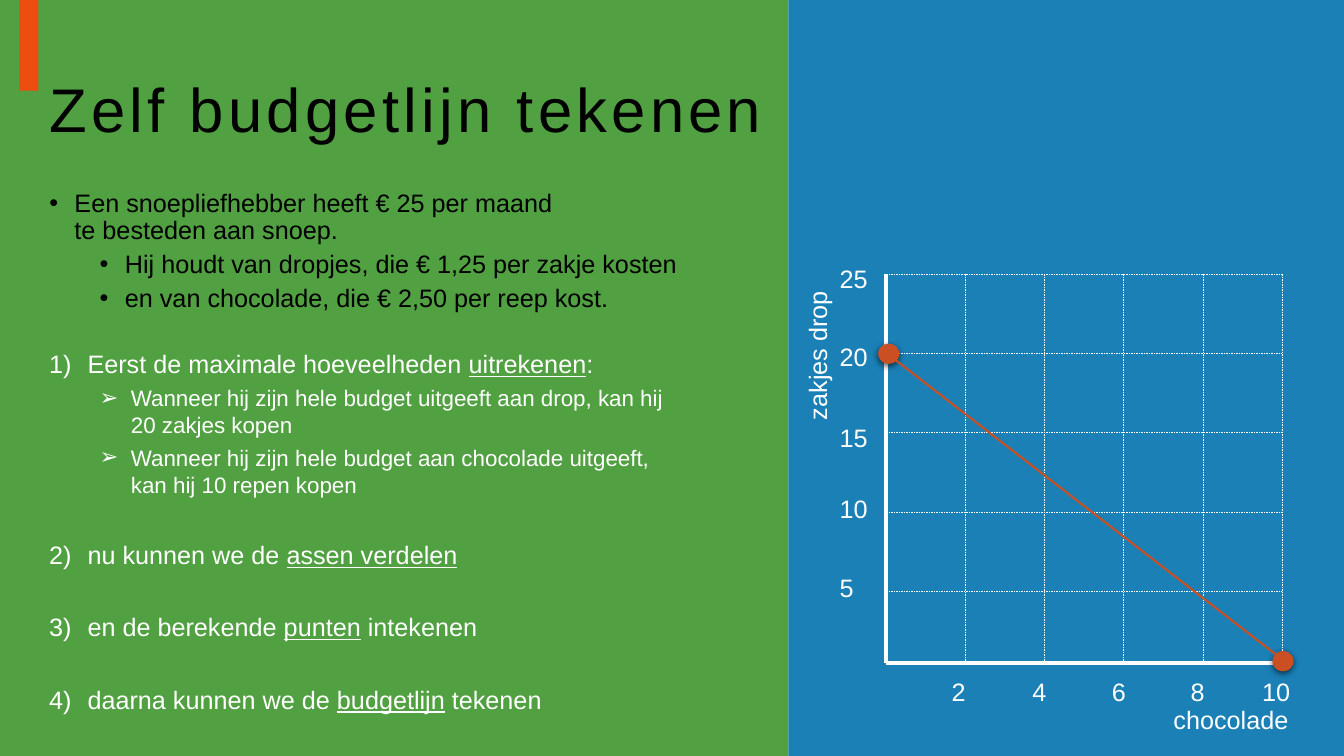
from lxml import etree
from pptx import Presentation
from pptx.dml.color import RGBColor
from pptx.enum.dml import MSO_LINE
from pptx.enum.shapes import MSO_CONNECTOR, MSO_SHAPE
from pptx.enum.text import MSO_ANCHOR, MSO_AUTO_SIZE
from pptx.oxml.ns import qn
from pptx.util import Pt

PX = 9144  # 100 px to the inch
FONT = "Arial"
RECT, OVAL = MSO_SHAPE.RECTANGLE, MSO_SHAPE.OVAL
LINE, DASH = MSO_CONNECTOR.STRAIGHT, MSO_LINE.DASH
TOP, MIDDLE = MSO_ANCHOR.TOP, MSO_ANCHOR.MIDDLE
COLORS = {
    "green": "51A041",
    "blue": "1A80B6",
    "accent": "ED4D0F",
    "budget": "CA4F22",
    "white": "FFFFFF",
    "black": "000000",
}

LEFT, UPPER, RIGHT, LOWER = 879, 272, 1272, 658
Y_MARKS = {"25": 256, "20": 334, "15": 414, "10": 484, "5": 563}
X_MARKS = {"2": 934, "4": 1014, "6": 1093, "8": 1171, "10": 1242}

# Each entry: level, space before in points, runs; "_" opens an underlined run
CASE = [
    (0, 0, ["Een snoepliefhebber heeft € 25 per maand \nte besteden aan snoep."]),
    (1, 5, ["Hij houdt van dropjes, die € 1,25 per zakje kosten"]),
    (1, 5, ["en van chocolade, die € 2,50 per reep kost."]),
]
STEPS = [
    (0, 0, ["Eerst de maximale hoeveelheden ", "_uitrekenen", ":"]),
    (1, 4, ["Wanneer hij zijn hele budget uitgeeft aan drop, kan hij \n"
            "20 zakjes kopen"]),
    (1, 4, ["Wanneer hij zijn hele budget aan chocolade uitgeeft, \n"
            "kan hij 10 repen kopen"]),
    (0, 30, ["nu kunnen we de ", "_assen verdelen"]),
    (0, 30, ["en de berekende ", "_punten", " intekenen"]),
    (0, 30, ["daarna kunnen we de ", "_budgetlijn", " tekenen"]),
]
# Per level: left margin px, hanging px, font size, bullet tag and attributes
CASE_LEVELS = [
    (25, 25, 18, "a:buChar", {"char": "•"}),
    (75, 25, 18, "a:buChar", {"char": "•"}),
]
STEP_LEVELS = [
    (38, 38, 18, "a:buAutoNum", {"type": "arabicParenR"}),
    (81, 31, 16, "a:buChar", {"char": "➢"}),
]


def rgb(name):
    return RGBColor.from_string(COLORS[name])


def add_block(slide, kind, box, color):
    block = slide.shapes.add_shape(kind, *(n * PX for n in box))
    block.shadow.inherit = False
    block.fill.solid()
    block.fill.fore_color.rgb = rgb(color)
    block.line.fill.background()
    return block


def add_dot(slide, x, y):
    dot = add_block(slide, OVAL, (x, y, 21, 20), "budget")
    glow = dot._element.spPr.find(qn("a:effectLst"))
    shade = etree.SubElement(glow, qn("a:outerShdw"), blurRad="57150",
                             dist="19050", dir="5400000", rotWithShape="0")
    tint = etree.SubElement(shade, qn("a:srgbClr"), val=COLORS["black"])
    etree.SubElement(tint, qn("a:alpha"), val="63000")


def add_line(slide, start, end, color, width, dash=None):
    line = slide.shapes.add_connector(LINE, *(n * PX for n in start + end))
    line.line.color.rgb = rgb(color)
    line.line.width = Pt(width)
    if dash:
        line.line.dash_style = dash
    etree.SubElement(line._element.spPr, qn("a:effectLst"))


def add_run(para, text, size, color):
    run = para.add_run()
    run.text = text
    font = run.font
    font.name, font.size = FONT, Pt(size)
    font.color.rgb = rgb(color)
    return run


def add_box(slide, box, anchor=TOP):
    shape = slide.shapes.add_textbox(*(n * PX for n in box))
    shape.text_frame.word_wrap = True
    shape.text_frame.vertical_anchor = anchor
    return shape


def add_title(slide, text):
    para = add_box(slide, (39, 39, 1261, 145), MIDDLE).text_frame.paragraphs[0]
    para.line_spacing = 0.9
    run = add_run(para, text, 44, "black")
    run.font._element.set("spc", "300")


def add_label(slide, text, x, y, width):
    label = add_box(slide, (x, y, width, 40))
    frame = label.text_frame
    frame.word_wrap = False
    frame.auto_size = MSO_AUTO_SIZE.SHAPE_TO_FIT_TEXT
    add_run(frame.paragraphs[0], text, 18, "white")
    return label


def add_list(slide, box, items, levels, color, spacing):
    frame = add_box(slide, box).text_frame
    for i, (level, before, runs) in enumerate(items):
        para = frame.add_paragraph() if i else frame.paragraphs[0]
        para.level = level
        para.space_before = Pt(before)
        para.line_spacing = spacing
        margin, hang, size, tag, attrs = levels[level]
        props = para._p.get_or_add_pPr()
        props.set("marL", str(margin * PX))
        props.set("indent", str(-hang * PX))
        etree.SubElement(props, qn("a:buFont"), typeface=FONT)
        etree.SubElement(props, qn(tag), attrs)
        for text in runs:
            for j, part in enumerate(text.lstrip("_").split("\n")):
                if j:
                    para.add_line_break()
                run = add_run(para, part, size, color)
                if text.startswith("_"):
                    run.font.underline = True


def add_graph(slide):
    add_line(slide, (LEFT, UPPER), (LEFT, LOWER), "white", 3)
    add_line(slide, (RIGHT, LOWER), (LEFT, LOWER), "white", 3)
    for i in range(5):
        y = UPPER + 315 * i // 4
        add_line(slide, (LEFT, y), (RIGHT, y), "white", 0.25, DASH)
        x = LEFT + (RIGHT - LEFT) * (i + 1) // 5
        add_line(slide, (x, UPPER), (x, LOWER), "white", 0.25, DASH)
    add_label(slide, "chocolade", 1154, 694, 135)
    add_label(slide, "zakjes drop", 736, 332, 149).rotation = 270
    for text, y in Y_MARKS.items():
        add_label(slide, text, 823, y, 20 + 14 * len(text))
    for text, x in X_MARKS.items():
        add_label(slide, text, x, 666, 20 + 14 * len(text))
    add_dot(slide, 871, 341)
    add_dot(slide, 1262, 646)
    add_line(slide, (888, 357), (1265, 649), "budget", 1.5)


def main():
    deck = Presentation()
    deck.slide_width, deck.slide_height = 1333 * PX, 750 * PX
    slide = deck.slides.add_slide(deck.slide_layouts[6])
    add_block(slide, RECT, (0, 0, 782, 750), "green")
    add_block(slide, RECT, (782, 0, 551, 750), "blue")
    add_block(slide, RECT, (19, 0, 19, 90), "accent")
    add_title(slide, "Zelf budgetlijn tekenen")
    add_list(slide, (39, 184, 739, 149), CASE, CASE_LEVELS, "black", 0.9)
    add_list(slide, (39, 341, 684, 391), STEPS, STEP_LEVELS, "white", 1.0)
    add_graph(slide)
    deck.save("out.pptx")


if __name__ == "__main__":
    main()
